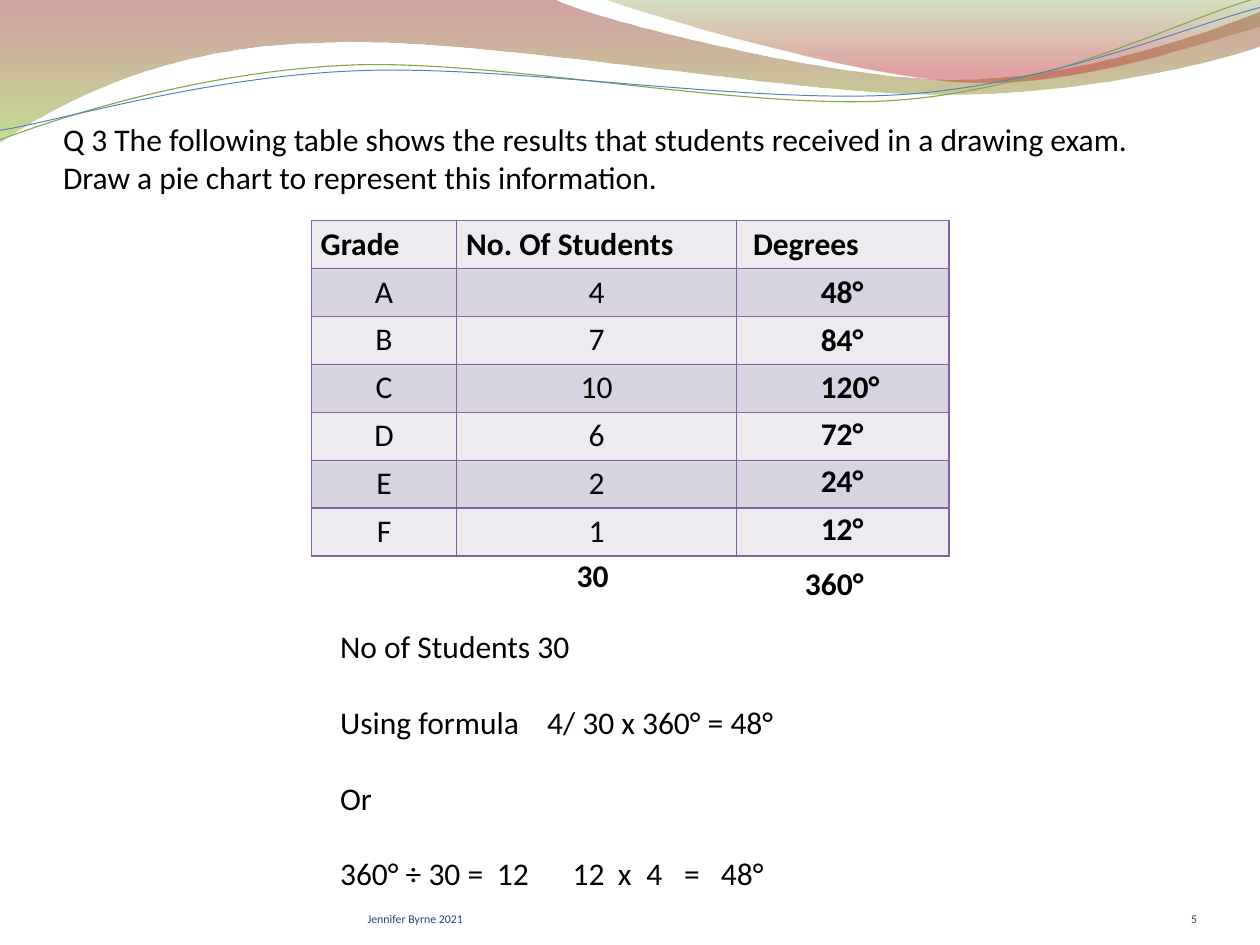
from collections import namedtuple
from dataclasses import dataclass

from lxml import etree
from pptx import Presentation
from pptx.dml.color import RGBColor
from pptx.enum.text import MSO_ANCHOR, PP_ALIGN
from pptx.oxml.ns import qn
from pptx.util import Inches, Pt

LEFT, MID, RIGHT = PP_ALIGN.LEFT, PP_ALIGN.CENTER, PP_ALIGN.RIGHT
BASE = MSO_ANCHOR.BOTTOM
WIDE, HIGH = Inches(13.33), Inches(10)
COLS, ROWS = 40, 30
Box = namedtuple("Box", "x y w h")


@dataclass(frozen=True)
class Theme:
    """Hold the colours, font and type sizes."""
    font: str = "Calibri"
    body: int = 24
    small: int = 9
    ink: str = "000000"
    foot: str = "1E4677"
    rule: str = "8064A2"
    bands: tuple = ("EDEAF0", "D8D3E0")


THEME = Theme()
GRADES = {"A": 4, "B": 7, "C": 10, "D": 6, "E": 2, "F": 1}
HEADS = {"Grade": 4.62, "No. Of Students": 8.88, " Degrees": 6.75}
WORK = (
    ("No of Students 30", ()),
    ("Using formula\t4/ 30 x 360° = 48°", (2.19,)),
    ("Or", ()),
    ("360° ÷ 30 =\t12\t12\tx\t4\t=\t48°", (1.66, 2.46, 2.94, 3.24, 3.64, 4.03)),
)
BANDS = (
    ([(0, -1), (587, -1),
      (634, 22, 885, 84, 1011, 84), (1137, 84, 1278, 34, 1333, 12),
      (1335, 48),
      (1311, 58, 1160, 101, 994, 100), (829, 100, 509, 37, 343, 45),
      (172, 47, 61, 110, -1, 151)],
     ((0, "973330", 45), (1, "95C238", 55))),
    ([(639, -1), (679, 15, 909, 82, 1025, 87),
      (1141, 92, 1282, 42, 1333, 28), (1333, 0)],
     ((0, "769537", 30), (0.8, "BE3330", 45))),
)
LINES = (
    ([(0, 148), (64, 124, 210, 76, 369, 69), (527, 62, 790, 118, 950, 106),
      (1111, 94, 1251, 20, 1330, -2)], "89A54F", 0.85),
    ([(0, 138), (63, 128, 218, 81, 377, 75), (537, 68, 796, 111, 956, 100),
      (1115, 89, 1255, 28, 1333, 8)], "4F81BD", 0.75),
)


def across(n):
    """Turn grid columns into a length."""
    return round(WIDE * n / COLS)


def down(n):
    """Turn grid rows into a length."""
    return round(HIGH * n / ROWS)


def place(shape, box):
    """Set a shape on its grid box."""
    shape.left, shape.top = across(box.x), down(box.y)
    shape.width, shape.height = across(box.w), down(box.h)


def style(para, size=THEME.body, tint=THEME.ink, bold=False, align=LEFT):
    """Format a paragraph and its runs."""
    para.alignment = align
    for run in para.runs:
        run.font.name, run.font.size, run.font.bold = THEME.font, Pt(size), bold
        run.font.color.rgb = RGBColor.from_string(tint)


def label(slide, box, text, wrap=False, **look):
    """Add a text box with one styled paragraph."""
    shape = slide.shapes.add_textbox(0, 0, 0, 0)
    place(shape, box)
    frame = shape.text_frame
    frame.word_wrap = wrap
    frame.text = text
    style(frame.paragraphs[0], **look)
    return frame


def bend(shape, nodes):
    """Join each three straight steps of a curve into one cubic."""
    steps = iter(list(shape._element.iter(qn("a:lnTo"))))
    for node in nodes[1:]:
        first = next(steps)
        if len(node) == 6:
            cubic = etree.Element(qn("a:cubicBezTo"))
            first.addprevious(cubic)
            for step in (first, next(steps), next(steps)):
                cubic.append(step[0])
                step.getparent().remove(step)


def outline(slide, box, nodes, close):
    """Draw a path given in hundredths of an inch."""
    spots = [node[i:i + 2] for node in nodes for i in range(0, len(node), 2)]
    pen = slide.shapes.build_freeform(*spots[0], scale=across(box.w) / 1333)
    pen.add_line_segments(spots[1:], close=close)
    shape = pen.convert_to_shape(across(box.x), down(box.y))
    bend(shape, nodes)
    shape.shadow.inherit = False
    return shape


def waves(slide, box):
    """Draw the shaded bands and thin curves."""
    for nodes, stops in BANDS:
        shape = outline(slide, box, nodes, True)
        shape.line.fill.background()
        shape.fill.gradient()
        shape.fill.gradient_angle = 270
        for stop, (pos, tint, _) in zip(shape.fill.gradient_stops, stops):
            stop.position, stop.color.rgb = pos, RGBColor.from_string(tint)
        tints = shape._element.spPr.iter(qn("a:srgbClr"))
        for node, (_, _, share) in zip(list(tints), stops):
            etree.SubElement(node, qn("a:alpha"), val=str(share * 1000))
    for nodes, tint, width in LINES:
        shape = outline(slide, box, nodes, False)
        shape.fill.background()
        shape.line.color.rgb = RGBColor.from_string(tint)
        shape.line.width = Pt(width)


def heading(slide, box):
    """Fill the title and bring it forward."""
    title = slide.shapes.title
    place(title, box)
    frame = title.text_frame
    frame.word_wrap, frame.vertical_anchor = True, BASE
    frame.margin_left = frame.margin_right = frame.margin_bottom = 0
    frame.text = ("Q 3 The following table shows the results that students received "
                  "in a drawing exam. Draw a pie chart to represent this information.")
    style(frame.paragraphs[0])
    slide.shapes._spTree.append(title._element)


def border(cell):
    """Rule all four sides of a cell."""
    props = cell._tc.get_or_add_tcPr()
    for side in ("a:lnL", "a:lnR", "a:lnT", "a:lnB"):
        line = etree.SubElement(props, qn(side), w=str(Pt(1)))
        fill = etree.SubElement(line, qn("a:solidFill"))
        etree.SubElement(fill, qn("a:srgbClr"), val=THEME.rule)


def grades(slide, box):
    """Add the grade table with its degrees and totals."""
    rows = [tuple(HEADS)] + [(mark, str(n), "") for mark, n in GRADES.items()]
    table = slide.shapes.add_table(len(rows), len(HEADS), across(box.x), down(box.y),
                                   across(box.w), down(box.h)).table
    for col, width in zip(table.columns, HEADS.values()):
        col.width = across(width)
    for i, row in enumerate(rows):
        for j, text in enumerate(row):
            cell = table.cell(i, j)
            border(cell)
            cell.fill.solid()
            cell.fill.fore_color.rgb = RGBColor.from_string(THEME.bands[i % 2])
            cell.text = text
            style(cell.text_frame.paragraphs[0], bold=i == 0, align=LEFT if i == 0 else MID)
    total, step = sum(GRADES.values()), box.h / len(rows)
    for i, n in enumerate(GRADES.values(), 1):
        text = f"{360 * n // total}°"
        spot = Box(box.x + 15.88, box.y + i * step, 0.5 + len(text) / 2, step)
        label(slide, spot, text, bold=True)
    base = box.y + box.h
    label(slide, Box(box.x + 15.38, base + 0.25, 2.5, step), "360°", bold=True)
    label(slide, Box(box.x + 8.13, base, 1.62, step), str(total), bold=True)


def working(slide, box):
    """Write the two ways of finding the angle."""
    frame = label(slide, box, "\n".join(text for text, _ in WORK))
    for i, (para, (_, tabs)) in enumerate(zip(frame.paragraphs, WORK)):
        style(para)
        para.space_before = Pt(29 if i else 0)
        if tabs:
            stops = etree.SubElement(para._p.get_or_add_pPr(), qn("a:tabLst"))
            for tab in tabs:
                etree.SubElement(stops, qn("a:tab"), pos=str(Inches(tab)), algn="l")


def footer(slide, box):
    """Write the author and page number."""
    parts = ((0, 14.67, "Jennifer Byrne 2021", LEFT), (box.w - 3.33, 3.33, "5", RIGHT))
    for dx, width, text, align in parts:
        frame = label(slide, Box(box.x + dx, box.y, width, box.h), text, wrap=True,
                      size=THEME.small, tint=THEME.foot, align=align)
        frame.vertical_anchor = BASE
        frame.margin_left = frame.margin_right = frame.margin_top = frame.margin_bottom = 0


def main():
    """Build the slide and save it."""
    deck = Presentation()
    deck.slide_width, deck.slide_height = WIDE, HIGH
    slide = deck.slides.add_slide(deck.slide_layouts[5])
    waves(slide, Box(0, 0, COLS, 4.5))
    heading(slide, Box(2, 1.2, 36, 5.01))
    grades(slide, Box(9.88, 7, 20.25, 10.5))
    working(slide, Box(10.5, 19.75, 14.7, 8.8))
    footer(slide, Box(11.67, 27.8, 26.33, 1.6))
    deck.save("out.pptx")


if __name__ == "__main__":
    main()
